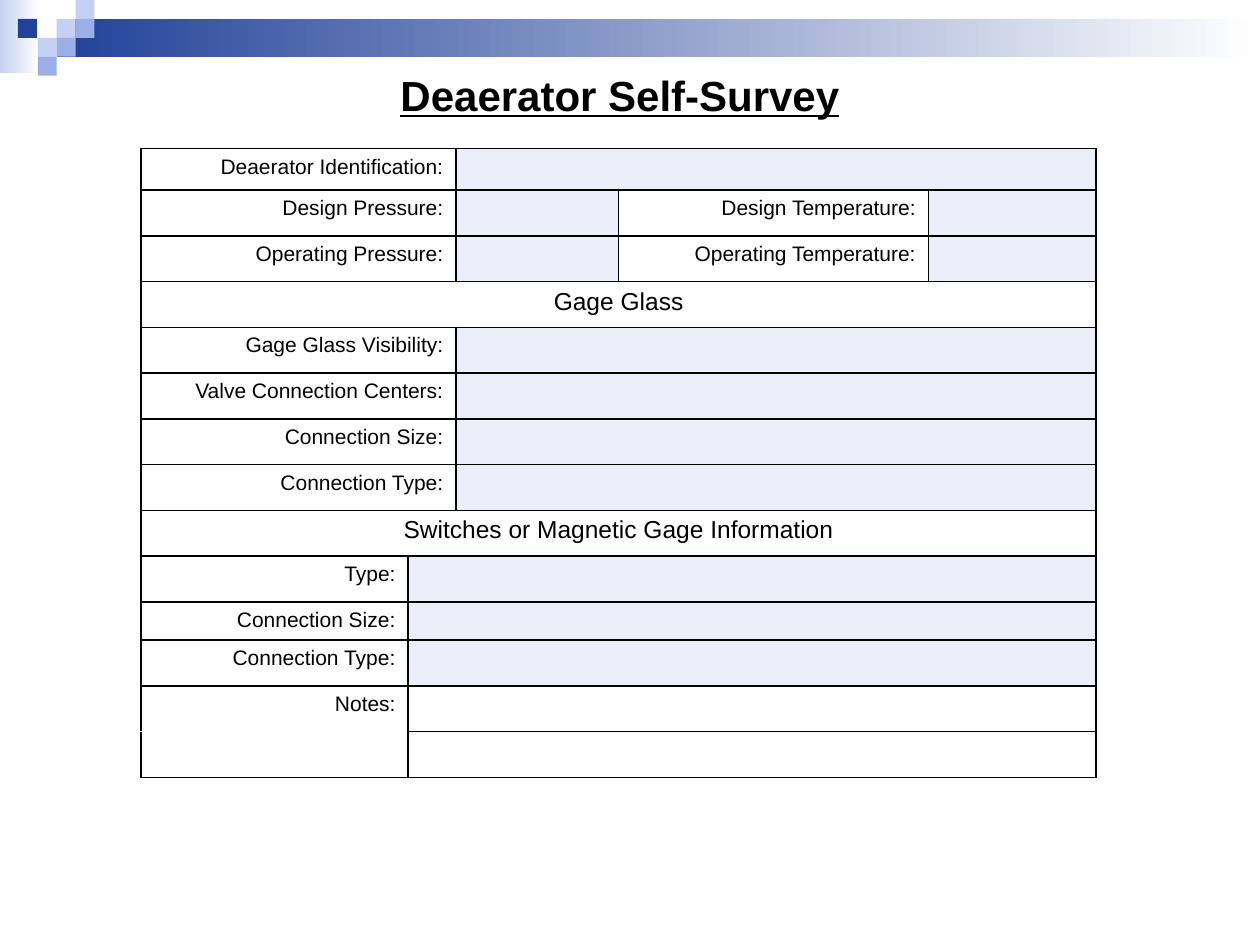
from dataclasses import dataclass

import pptx
import pptx.dml.color
import pptx.enum.text
import pptx.oxml
import pptx.oxml.ns
import pptx.util

RGB = pptx.dml.color.RGBColor
ALIGN = pptx.enum.text.PP_ALIGN
Inches = pptx.util.Inches
Pt = pptx.util.Pt

BLACK = RGB(0x00, 0x00, 0x00)
WHITE = RGB(0xFF, 0xFF, 0xFF)
NAVY = RGB(0x22, 0x42, 0x99)
MID = RGB(0x9C, 0xB0, 0xE7)
LIGHT = RGB(0xC4, 0xD1, 0xF2)
FIELD = RGB(0xEB, 0xEF, 0xFA)

FONT = "Arial"
WIDE, HIGH = 10, 7.5
UNIT = HIGH / 50  # side of one corner square

COLS = [2.12, 0.38, 1.29, 2.46, 1.33]
TOTAL, FIRST, SHORT, SLIM = 4.98, 0.33, 0.29, 10


@dataclass
class Block:
    col: float
    row: float
    wide: float
    high: float
    fill: RGB
    fade: bool = False


@dataclass
class Entry:
    text: str = ""
    span: int = 1
    fill: RGB = WHITE
    size: int = 12
    align: ALIGN = ALIGN.RIGHT
    sides: str = "LRTB"


# Corner ornament, in squares of the grid
BLOCKS = [
    Block(0, 0, 2.07, 3.87, LIGHT, True),
    Block(3, 1, WIDE / UNIT - 3, 2, NAVY, True),
] + [Block(col, row, 1, 1, fill) for col, row, fill in [
    (3, 1, LIGHT), (4, 0, LIGHT), (4, 1, MID), (2, 2, LIGHT),
    (0.95, 1, NAVY), (3, 2, MID), (2, 3, MID)]]


# Row patterns of the form
def line(text: str, span: int) -> list[Entry]:
    return [Entry(text, span), Entry(span=5 - span, fill=FIELD)]


def pair(left: str, right: str) -> list[Entry]:
    return [Entry(left, 2), Entry(fill=FIELD), Entry(right), Entry(fill=FIELD)]


def head(text: str) -> list[Entry]:
    return [Entry(text, 5, size=14, align=ALIGN.CENTER)]


def note(text: str, sides: str) -> list[Entry]:
    return [Entry(text, sides=sides), Entry(span=4)]


ROWS = [
    line("Deaerator Identification:", 2),
    pair("Design Pressure:", "Design Temperature:"),
    pair("Operating Pressure:", "Operating Temperature:"),
    head("Gage Glass"),
    line("Gage Glass Visibility:", 2),
    line("Valve Connection Centers:", 2),
    line("Connection Size:", 2),
    line("Connection Type:", 2),
    head("Switches or Magnetic Gage Information"),
    line("Type:", 1),
    line("Connection Size:", 1),
    line("Connection Type:", 1),
    note("Notes:", "LRT"),
    note("", "LRB"),
]


def draw_block(slide, block: Block) -> None:
    spot = [Inches(UNIT * n) for n in (block.col, block.row, block.wide, block.high)]
    shape = slide.shapes.add_shape(pptx.enum.shapes.MSO_SHAPE.RECTANGLE, *spot)
    shape.shadow.inherit = False
    shape.line.fill.background()
    if block.fade:
        shape.fill.gradient()
        shape.fill.gradient_angle = 0
        for stop, color in zip(shape.fill.gradient_stops, (block.fill, WHITE)):
            stop.color.rgb = color
    else:
        shape.fill.solid()
        shape.fill.fore_color.rgb = block.fill


def style(font, size: int) -> None:
    font.name = FONT
    font.size = Pt(size)
    font.color.rgb = BLACK


def rule(cell, sides: str) -> None:
    props = cell._tc.get_or_add_tcPr()
    for side in sides:
        props.append(pptx.oxml.parse_xml(
            f'<a:ln{side} {pptx.oxml.ns.nsdecls("a")} w="{Pt(1)}"><a:solidFill>'
            f'<a:srgbClr val="{BLACK}"/></a:solidFill></a:ln{side}>'))


def draw_entry(table, row: int, col: int, entry: Entry) -> None:
    cell = table.cell(row, col)
    last = col + entry.span - 1
    if entry.span > 1:
        cell.merge(table.cell(row, last))
    # Covered cells carry only the outer edges of the span
    for place in range(col, last + 1):
        part = table.cell(row, place)
        rule(part, "".join(s for s in "LRTB" if s in entry.sides
                           and (s != "L" or place == col)
                           and (s != "R" or place in (col, last))))
        part.fill.solid()
        part.fill.fore_color.rgb = entry.fill
        end = part.text_frame.paragraphs[0]._p.get_or_add_endParaRPr()
        end.set("sz", str(entry.size * 100))
    if entry.text:
        para = cell.text_frame.paragraphs[0]
        para.text = entry.text
        para.alignment = entry.align
        style(para.runs[0].font, entry.size)


def draw_form(slide) -> None:
    frame = slide.shapes.add_table(
        len(ROWS), len(COLS), Inches(1.12), Inches(1.18),
        Inches(sum(COLS)), Inches(TOTAL))
    table = frame.table
    table.first_row = table.horz_banding = False
    for col, wide in zip(table.columns, COLS):
        col.width = Inches(wide)
    rest = (TOTAL - FIRST - SHORT) / (len(ROWS) - 2)
    for num, entries in enumerate(ROWS):
        table.rows[num].height = Inches({0: FIRST, SLIM: SHORT}.get(num, rest))
        col = 0
        for entry in entries:
            draw_entry(table, num, col, entry)
            col += entry.span


def draw_title(slide) -> None:
    title = slide.shapes.title
    title.left, title.top = Inches(2.71), Inches(0.5)
    title.width, title.height = Inches(4.42), Inches(0.5)
    frame = title.text_frame
    frame.text = "Deaerator Self-Survey"
    frame.auto_size = pptx.enum.text.MSO_AUTO_SIZE.NONE
    frame.vertical_anchor = pptx.enum.text.MSO_ANCHOR.TOP
    para = frame.paragraphs[0]
    para.alignment = ALIGN.CENTER
    font = para.runs[0].font
    style(font, 24)
    font.bold = font.underline = True


def main() -> None:
    deck = pptx.Presentation()
    deck.slide_width, deck.slide_height = Inches(WIDE), Inches(HIGH)
    slide = deck.slides.add_slide(deck.slide_layouts[5])
    for block in BLOCKS:
        draw_block(slide, block)
    draw_form(slide)
    draw_title(slide)
    deck.save("out.pptx")


if __name__ == "__main__":
    main()
